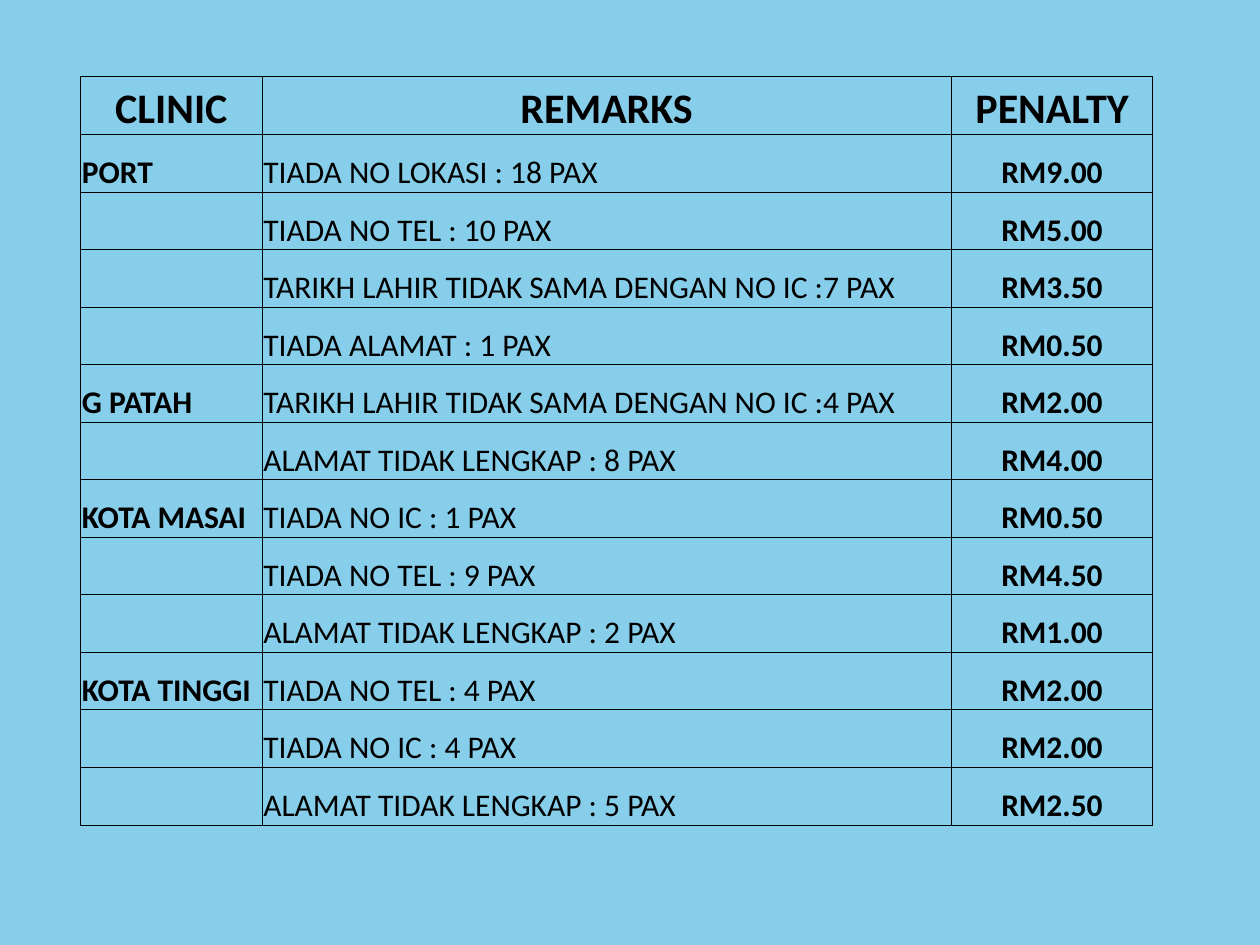
from dataclasses import dataclass

from lxml.etree import SubElement
from pptx import Presentation
from pptx.dml.color import RGBColor
from pptx.enum.text import MSO_ANCHOR, PP_ALIGN
from pptx.oxml.ns import qn
from pptx.table import Table, _Cell
from pptx.util import Inches, Pt


@dataclass(frozen=True)
class Theme:
    background: RGBColor = RGBColor.from_string("87CEEB")
    ink: RGBColor = RGBColor.from_string("000000")
    font: str = "Calibri"
    header_size: int = 24
    body_size: int = 18
    border_width: float = 0.5


@dataclass(frozen=True)
class Column:
    heading: str
    width: float
    align: PP_ALIGN
    bold: bool


@dataclass(frozen=True)
class Penalty:
    clinic: str
    remark: str
    amount: str


THEME = Theme()
COLUMNS = [
    Column("CLINIC", 1.44, PP_ALIGN.LEFT, True),
    Column("REMARKS", 5.47, PP_ALIGN.LEFT, False),
    Column("PENALTY", 1.6, PP_ALIGN.CENTER, True),
]
PENALTIES = [
    Penalty("PORT", "TIADA NO LOKASI : 18 PAX", "RM9.00"),
    Penalty("", "TIADA NO TEL : 10 PAX", "RM5.00"),
    Penalty("", "TARIKH LAHIR TIDAK SAMA DENGAN NO IC :7 PAX", "RM3.50"),
    Penalty("", "TIADA ALAMAT : 1 PAX", "RM0.50"),
    Penalty("G PATAH", "TARIKH LAHIR TIDAK SAMA DENGAN NO IC :4 PAX", "RM2.00"),
    Penalty("", "ALAMAT TIDAK LENGKAP : 8 PAX", "RM4.00"),
    Penalty("KOTA MASAI", "TIADA NO IC : 1 PAX", "RM0.50"),
    Penalty("", "TIADA NO TEL : 9 PAX", "RM4.50"),
    Penalty("", "ALAMAT TIDAK LENGKAP : 2 PAX", "RM1.00"),
    Penalty("KOTA TINGGI", "TIADA NO TEL : 4 PAX", "RM2.00"),
    Penalty("", "TIADA NO IC : 4 PAX", "RM2.00"),
    Penalty("", "ALAMAT TIDAK LENGKAP : 5 PAX", "RM2.50"),
]


def draw_borders(cell: _Cell) -> None:
    """Rule all four sides; the lines must come before the fill in the XML."""
    properties = cell._tc.get_or_add_tcPr()
    for position, side in enumerate(("a:lnL", "a:lnR", "a:lnT", "a:lnB")):
        line = SubElement(properties, qn(side), w=str(Pt(THEME.border_width)))
        fill = SubElement(line, qn("a:solidFill"))
        SubElement(fill, qn("a:srgbClr"), val=str(THEME.ink))
        properties.insert(position, line)


def write_cell(cell: _Cell, text: str, size: int, bold: bool, align: PP_ALIGN) -> None:
    cell.margin_left = cell.margin_right = cell.margin_top = Inches(0.01)
    cell.margin_bottom = 0
    cell.vertical_anchor = MSO_ANCHOR.BOTTOM
    cell.fill.background()
    draw_borders(cell)
    paragraph = cell.text_frame.paragraphs[0]
    paragraph.text = text
    paragraph.alignment = align
    font = paragraph.font
    if paragraph.runs:
        font = paragraph.runs[0].font
    font.name = THEME.font
    font.size = Pt(size)
    font.bold = bold
    font.color.rgb = THEME.ink


def fill_table(table: Table) -> None:
    table.first_row = table.horz_banding = False
    for index, column in enumerate(COLUMNS):
        table.columns[index].width = Inches(column.width)
        write_cell(table.cell(0, index), column.heading,
                   THEME.header_size, True, PP_ALIGN.CENTER)
    for row, penalty in enumerate(PENALTIES, start=1):
        values = (penalty.clinic, penalty.remark, penalty.amount)
        for index, (column, value) in enumerate(zip(COLUMNS, values)):
            write_cell(table.cell(row, index), value,
                       THEME.body_size, column.bold, column.align)


def main() -> None:
    presentation = Presentation()
    presentation.slide_width = Inches(10)
    presentation.slide_height = Inches(7.5)

    # Blank layout, since the slide has no title
    slide = presentation.slides.add_slide(presentation.slide_layouts[6])
    slide.background.fill.solid()
    slide.background.fill.fore_color.rgb = THEME.background

    # Penalty table, with rows of equal height
    width = sum(column.width for column in COLUMNS)
    frame = slide.shapes.add_table(
        len(PENALTIES) + 1, len(COLUMNS),
        Inches(0.64), Inches(0.61), Inches(width), Inches(5.94))
    fill_table(frame.table)

    presentation.save("out.pptx")


if __name__ == "__main__":
    main()
